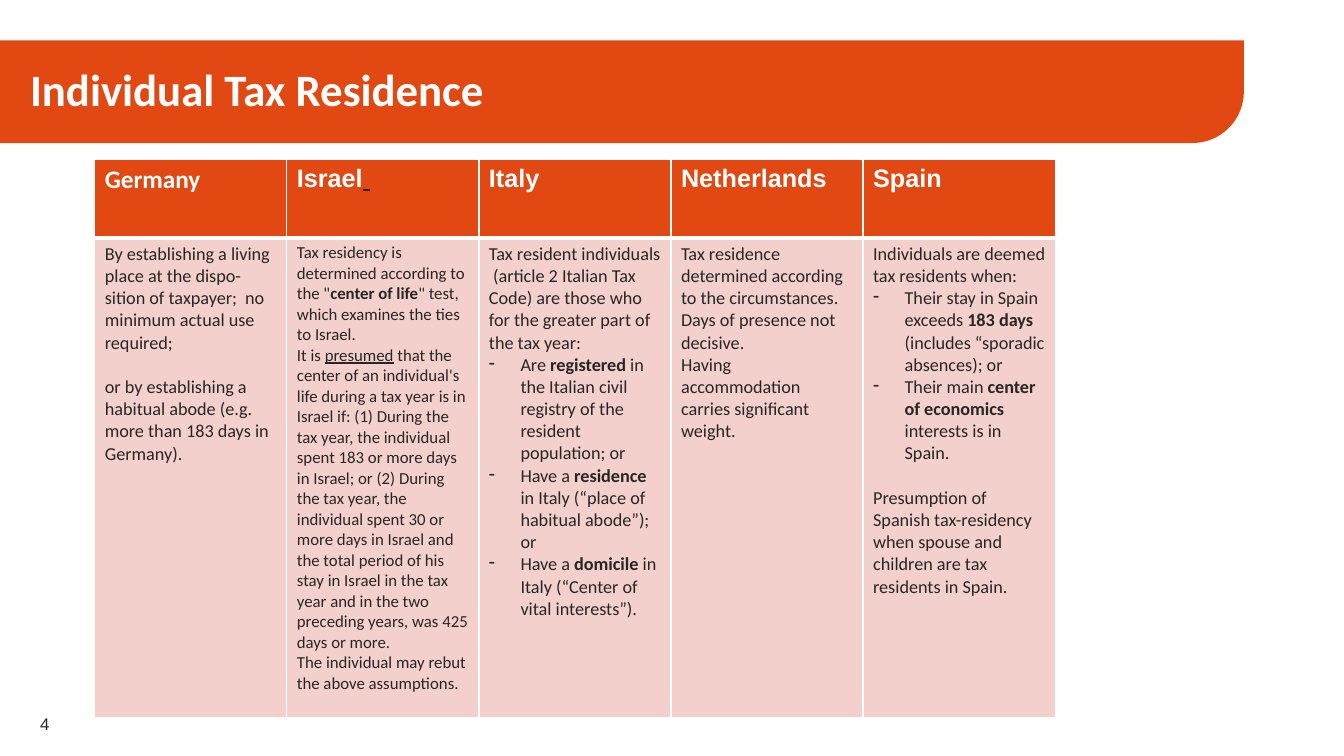
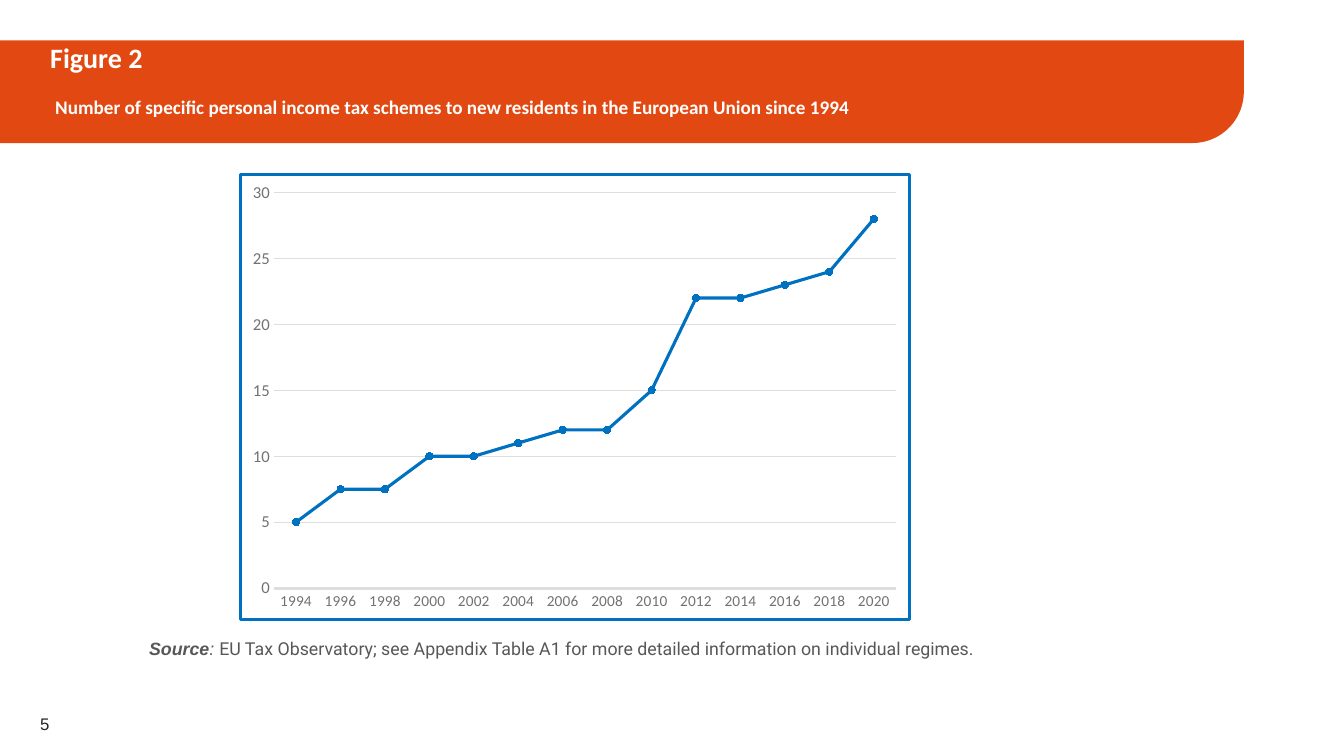
from dataclasses import dataclass
from itertools import product

from lxml.etree import SubElement
from pptx import Presentation
from pptx.chart.data import CategoryChartData
from pptx.dml.color import RGBColor
from pptx.enum.chart import XL_CHART_TYPE, XL_MARKER_STYLE, XL_TICK_MARK
from pptx.enum.shapes import MSO_SHAPE
from pptx.enum.text import MSO_ANCHOR
from pptx.oxml import parse_xml
from pptx.oxml.ns import nsdecls, qn
from pptx.util import Pt

ORANGE, PINK, WHITE, INK = "E24912", "F4D0CC", "FFFFFF", "262626"
BLUE, GRID, AXIS_TEXT, SOURCE_TEXT = "0070C0", "DEDEDE", "727272", "585757"

HEADING = {"name": "Calibri", "size": Pt(32), "bold": True, "color": WHITE}
HEADER = {"name": "Arial", "size": Pt(18), "bold": True, "color": WHITE}
BODY = {"name": "Calibri", "size": Pt(13), "bold": False, "color": INK}
SOURCE = {"name": "Arial", "size": Pt(12.7), "italic": True, "color": SOURCE_TEXT}
NUMBER = {"name": "Arial", "size": Pt(12), "color": INK}
BOLD = {"bold": True}
HANG = Pt(22.5)
LINE_GAP = 15.9


@dataclass
class Line:
    """One paragraph; each span is a string or a (string, format) pair."""
    spans: tuple
    bullet: bool = False
    gap: float = 0


def line(*spans, **options):
    return Line(spans, **options)


def rgb(color):
    return RGBColor.from_string(color)


def format_font(font, values):
    for name, value in values.items():
        if name == "color":
            font.color.rgb = rgb(value)
        else:
            setattr(font, name, value)


def paint_line(outline, color, width):
    outline.color.rgb = rgb(color)
    outline.width = Pt(width)


def write(frame, lines, style):
    for index, item in enumerate(lines):
        para = frame.paragraphs[0] if index == 0 else frame.add_paragraph()
        if item.bullet:
            props = para._p.get_or_add_pPr()
            props.set("marL", str(HANG))
            props.set("indent", str(-HANG))
            SubElement(props, qn("a:buChar")).set("char", "-")
        if item.gap:
            para.space_before = Pt(item.gap)
        for content in item.spans:
            text, changes = (content, {}) if isinstance(content, str) else content
            span = para.add_run()
            span.text = text
            format_font(span.font, style | changes)


def set_cell_borders(cell, widths):
    props = cell._tc.get_or_add_tcPr()
    for side, width in zip("LRTB", widths):
        props.append(parse_xml(
            f'<a:ln{side} {nsdecls("a")} w="{Pt(width)}"><a:solidFill>'
            f'<a:srgbClr val="{WHITE}"/></a:solidFill></a:ln{side}>'))


class TaxDeck:
    def __init__(self):
        self.deck = Presentation()
        self.deck.slide_width, self.deck.slide_height = Pt(960), Pt(540)
        self.page = None

    def add_page(self, number):
        self.page = self.deck.slides.add_slide(self.deck.slide_layouts[6])
        band = self.page.shapes.add_shape(
            MSO_SHAPE.ROUND_1_RECTANGLE, Pt(0), Pt(28.8), Pt(888.5), Pt(73.4))
        band.adjustments[0] = 0.5
        band._element.spPr.find(qn("a:xfrm")).set("flipV", "1")
        band.shadow.inherit = False
        band.fill.solid()
        band.fill.fore_color.rgb = rgb(ORANGE)
        band.line.fill.background()
        self.text((21.6, 502.6, 45.4, 28.8), line(str(number)), NUMBER)

    def text(self, place, content, style):
        box = self.page.shapes.add_textbox(*map(Pt, place))
        box.text_frame.word_wrap = True
        box.text_frame.vertical_anchor = MSO_ANCHOR.MIDDLE
        write(box.text_frame, [content], style)

    def table(self, place, heights, columns):
        """Draw one column for each (header line, body lines) pair."""
        table = self.page.shapes.add_table(
            2, len(columns), *map(Pt, place)).table
        for row, height in zip(table.rows, heights):
            row.height = Pt(height)
        for column in table.columns:
            column.width = Pt(place[2] / len(columns))
        looks = [(HEADER, ORANGE, (1, 1, 1, 3)), (BODY, PINK, (1, 1, 3, 1))]
        for row, column in product(range(2), range(len(columns))):
            style, fill, widths = looks[row]
            cell = table.cell(row, column)
            set_cell_borders(cell, widths)
            cell.fill.solid()
            cell.fill.fore_color.rgb = rgb(fill)
            write(cell.text_frame, columns[column][row], style)

    def line_chart(self, place, years, counts):
        data = CategoryChartData()
        data.categories = years
        data.add_series("Series 1", counts)
        chart = self.page.shapes.add_chart(
            XL_CHART_TYPE.LINE_MARKERS_STACKED, *map(Pt, place), data).chart
        chart.has_title = chart.has_legend = False
        format_font(chart.font, BODY | {"size": Pt(10)})
        self.frame_chart(chart)

        for axis, size in ((chart.category_axis, 11), (chart.value_axis, 12)):
            axis.major_tick_mark = axis.minor_tick_mark = XL_TICK_MARK.NONE
            format_font(axis.tick_labels.font,
                        BODY | {"size": Pt(size), "color": AXIS_TEXT})
        paint_line(chart.category_axis.format.line, GRID, 2.25)
        scale = chart.value_axis
        scale.minimum_scale, scale.maximum_scale, scale.major_unit = 0, 30, 5
        scale.format.line.fill.background()
        paint_line(scale.major_gridlines.format.line, GRID, 0.75)

        series = chart.plots[0].series[0]
        series.smooth = False
        paint_line(series.format.line, BLUE, 2.25)
        marker = series.marker
        marker.style, marker.size = XL_MARKER_STYLE.CIRCLE, 5
        marker.format.fill.solid()
        marker.format.fill.fore_color.rgb = rgb(BLUE)
        paint_line(marker.format.line, BLUE, 0.75)

    def frame_chart(self, chart):
        """Give the chart a border and fix its plot area."""
        space = chart._chartSpace
        space.find(qn("c:chart")).addnext(parse_xml(
            f'<c:spPr {nsdecls("c", "a")}><a:noFill/><a:ln w="{Pt(2.25)}">'
            f'<a:solidFill><a:srgbClr val="{BLUE}"/></a:solidFill></a:ln></c:spPr>'))
        area = space.find(qn("c:chart")).find(qn("c:plotArea"))
        for old in area.findall(qn("c:layout")):
            area.remove(old)
        settings = {"layoutTarget": "inner", "xMode": "edge", "yMode": "edge",
                    "x": 0.05, "y": 0.04, "w": 0.93, "h": 0.89}
        values = "".join(f'<c:{name} val="{value}"/>'
                         for name, value in settings.items())
        area.insert(0, parse_xml(
            f'<c:layout {nsdecls("c")}><c:manualLayout>{values}'
            '</c:manualLayout></c:layout>'))


GERMANY = [
    line("By establishing a living place at the dispo-sition of taxpayer;  no "
         "minimum actual use required;"),
    line("or by establishing a habitual abode (e.g. more than 183 days in "
         "Germany).", gap=LINE_GAP),
]
SMALL = {"size": Pt(12)}
ISRAEL = [
    line(('Tax residency is determined according to the "', SMALL),
         ("center of life", SMALL | BOLD),
         ('" test, which examines the ties to Israel.', SMALL)),
    line(("It is ", SMALL), ("presumed", SMALL | {"underline": True}),
         (" that the center of an individual's life during a tax year is in "
          "Israel if: (1) During the tax year, the individual spent 183 or more "
          "days in Israel; or (2) During the tax year, the individual spent 30 "
          "or more days in Israel and the total period of his stay in Israel in "
          "the tax year and in the two preceding years, was 425 days or more.",
          SMALL)),
    line(("The individual may rebut the above assumptions.", SMALL)),
]
ITALY = [
    line("Tax resident individuals  (article 2 Italian Tax Code) are those who "
         "for the greater part of the tax year:"),
    line("Are ", ("registered", BOLD),
         " in the Italian civil registry of the resident population; or",
         bullet=True),
    line("Have a ", ("residence", BOLD),
         " in Italy (“place of habitual abode”); or", bullet=True),
    line("Have a ", ("domicile", BOLD),
         " in Italy (“Center of vital interests”).", bullet=True),
]
NETHERLANDS = [
    line("Tax residence determined according to the circumstances."),
    line("Days of presence not decisive."),
    line("Having accommodation carries significant weight."),
]
SPAIN = [
    line("Individuals are deemed tax residents when:"),
    line("Their stay in Spain exceeds ", ("183 days ", BOLD),
         "(includes “sporadic absences); or", bullet=True),
    line("Their main ", ("center of economics ", BOLD),
         "interests is in Spain.", bullet=True),
    line("Presumption of Spanish tax-residency when spouse and children are tax "
         "residents in Spain.", gap=LINE_GAP),
]


def main():
    slides = TaxDeck()

    slides.add_page(4)
    slides.text((14.4, 18, 632, 90), line("Individual Tax Residence"), HEADING)
    slides.table((67.7, 113.8, 686, 398.9), (56.2, 342.7), [
        ([line(("Germany", {"name": "Calibri"}))], GERMANY),
        ([line("Israel", (" ", {"color": INK, "underline": True}))], ISRAEL),
        ([line("Italy")], ITALY),
        ([line("Netherlands")], NETHERLANDS),
        ([line("Spain")], SPAIN),
    ])

    slides.add_page(5)
    slides.line_chart(
        (170.6, 123.8, 480.2, 319.7),
        [str(year) for year in range(1994, 2021, 2)],
        (5, 7.5, 7.5, 10, 10, 11, 12, 12, 15, 22, 22, 23, 24, 28))
    slides.text((28.8, 31, 160, 20), line("Figure 2"),
                HEADING | {"size": Pt(20)})
    slides.text((32.4, 56.9, 653, 38.9),
                line("Number of specific personal income tax schemes to new "
                     "residents in the European Union since 1994"),
                HEADING | {"size": Pt(13.7)})
    slides.text((99.4, 443.5, 653, 38.9),
                line(("Source", BOLD), ": ",
                     ("EU Tax Observatory; see Appendix Table A1 for more "
                      "detailed information on individual regimes.",
                      {"name": "Roboto", "italic": False})),
                SOURCE)

    slides.deck.save("out.pptx")


if __name__ == "__main__":
    main()
